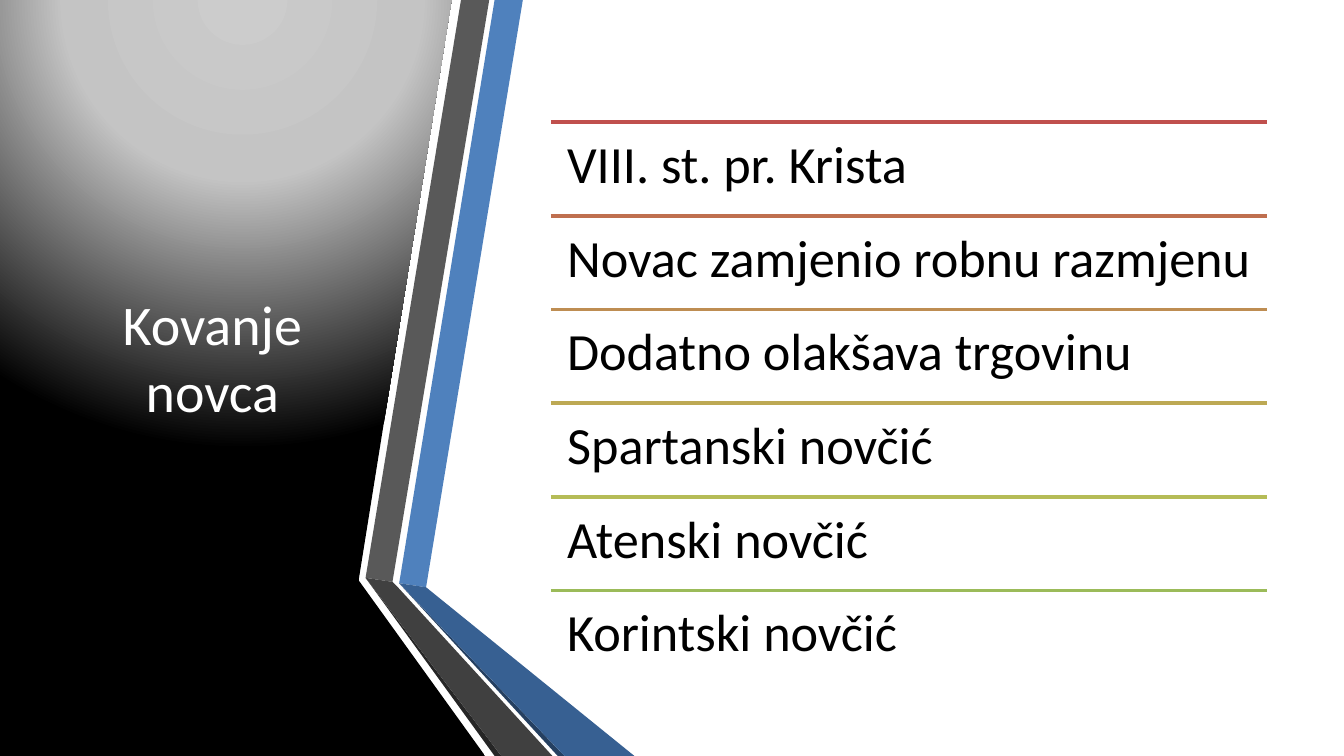
from lxml.etree import SubElement
from pptx import Presentation
from pptx.dml.color import RGBColor
from pptx.enum.shapes import MSO_CONNECTOR
from pptx.enum.text import MSO_ANCHOR, PP_ALIGN
from pptx.oxml import parse_xml
from pptx.oxml.ns import nsdecls, qn
from pptx.util import Inches, Pt

FONT = "Calibri"
WHITE = RGBColor(0xFF, 0xFF, 0xFF)
BLACK = RGBColor(0x00, 0x00, 0x00)
BLUE = RGBColor(0x4F, 0x81, 0xBD)
MID_BLUE = RGBColor(0x37, 0x60, 0x92)
DARK_BLUE = RGBColor(0x25, 0x40, 0x61)
GREY = RGBColor(0x59, 0x59, 0x59)
MID_GREY = RGBColor(0x40, 0x40, 0x40)
DARK_GREY = RGBColor(0x26, 0x26, 0x26)

# Widescreen 16:9
W = 10
H = W * 9 / 16

PANEL = [(2.64, 0), (3.36, 0), (2.67, 4.31), (2.67, 4.32), (3.61, H), (0, H), (0, 0)]
RIBBONS = [
    (BLUE, [(2.97, 4.34), (3.17, 4.37), (3.89, 0), (3.68, 0)]),
    (GREY, [(3.64, 0), (3.43, 0), (2.72, 4.3), (2.92, 4.33)]),
    (DARK_GREY, [(2.72, 4.3), (3.68, H), (3.73, H)]),
    (DARK_BLUE, [(2.97, 4.34), (4.15, H), (4.2, H)]),
    (MID_BLUE, [(2.97, 4.34), (4.2, H), (4.72, H), (3.17, 4.37)]),
    (MID_GREY, [(4.11, H), (2.96, 4.37), (2.92, 4.33), (2.72, 4.3), (3.73, H)]),
]
ITEMS = [
    ("VIII. st. pr. Krista", RGBColor(0xC0, 0x50, 0x4D)),
    ("Novac zamjenio robnu razmjenu", RGBColor(0xBF, 0x6F, 0x4F)),
    ("Dodatno olakšava trgovinu", RGBColor(0xBE, 0x8D, 0x52)),
    ("Spartanski novčić", RGBColor(0xBD, 0xA9, 0x54)),
    ("Atenski novčić", RGBColor(0xB5, 0xBC, 0x57)),
    ("Korintski novčić", RGBColor(0x9B, 0xBB, 0x59)),
]


def add_run(p, text, size, color):
    r = p.add_run()
    r.text = text
    r.font.name, r.font.size = FONT, Pt(size)
    r.font.color.rgb = color


def add_polygon(shapes, x, y, points):
    pts = [(Inches(x + px), Inches(y + py)) for px, py in points]
    builder = shapes.build_freeform(*pts[0])
    builder.add_line_segments(pts[1:], close=True)
    shape = builder.convert_to_shape()
    shape.shadow.inherit = False
    shape.line.fill.background()
    return shape


def add_panel(s, x, y):
    """Dark side panel lit from above."""
    panel = add_polygon(s.shapes, x, y, PANEL)
    panel.fill.background()
    no_fill = panel.element.spPr.find(qn("a:noFill"))
    stops = "".join(
        f'<a:gs pos="{pos * 1000}"><a:srgbClr val="{color}"/></a:gs>'
        for pos, color in [(0, "CCCCCC"), (40, "C4C4C4"), (100, "000000")]
    )
    no_fill.getparent().replace(no_fill, parse_xml(
        f'<a:gradFill {nsdecls("a")} rotWithShape="1"><a:gsLst>{stops}</a:gsLst>'
        '<a:path path="circle">'
        '<a:fillToRect l="50000" t="-80000" r="50000" b="180000"/>'
        '</a:path></a:gradFill>'
    ))


def add_ribbons(s, x, y):
    """Folded grey and blue ribbons along the panel edge."""
    group = s.shapes.add_group_shape()
    for color, points in RIBBONS:
        ribbon = add_polygon(group.shapes, x, y, points)
        ribbon.fill.solid()
        ribbon.fill.fore_color.rgb = color


def add_title(s, x, y, w, h):
    title = s.shapes.title
    title.left, title.top, title.width, title.height = map(Inches, (x, y, w, h))
    tf = title.text_frame
    tf.vertical_anchor = MSO_ANCHOR.MIDDLE
    p = tf.paragraphs[0]
    p.alignment = PP_ALIGN.CENTER
    add_run(p, "Kovanje novca", 30, WHITE)
    # Bring the title in front of the panel
    title.element.getparent().append(title.element)


def add_list(s, x, y, w, h):
    """Equal rows, each under a coloured rule."""
    group = s.shapes.add_group_shape()
    row_h = h / len(ITEMS)
    for i, (text, color) in enumerate(ITEMS):
        top = Inches(y + i * row_h)
        rule = group.shapes.add_connector(
            MSO_CONNECTOR.STRAIGHT, Inches(x), top, Inches(x + w), top)
        rule.line.color.rgb = color
        rule.line.width = Pt(2)
        SubElement(rule.element.spPr, qn("a:effectLst"))

        box = group.shapes.add_textbox(Inches(x), top, Inches(w), Inches(row_h))
        tf = box.text_frame
        tf.word_wrap = True
        tf.margin_left = tf.margin_right = Inches(0.12)
        tf.margin_top = tf.margin_bottom = Inches(0.12)
        p = tf.paragraphs[0]
        p.line_spacing = 0.9
        add_run(p, text, 28, BLACK)


def main():
    prs = Presentation()
    prs.slide_width, prs.slide_height = Inches(W), Inches(H)
    s = prs.slides.add_slide(prs.slide_layouts[5])
    s.background.fill.solid()
    s.background.fill.fore_color.rgb = WHITE
    add_panel(s, 0, 0)
    add_ribbons(s, 0, 0)
    add_title(s, 0.44, 0.56, 2.28, 4.19)
    add_list(s, 4.1, 0.91, 5.33, 4.18)
    prs.save("out.pptx")


if __name__ == "__main__":
    main()
